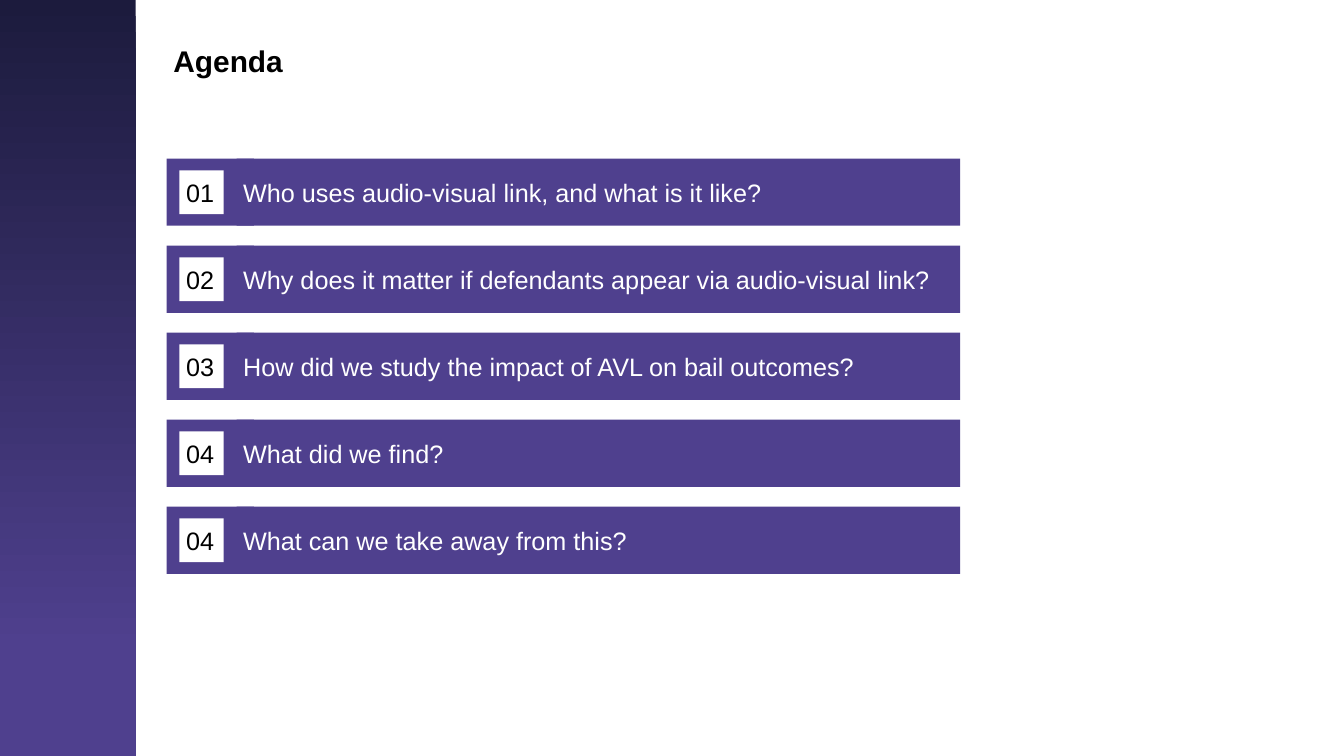
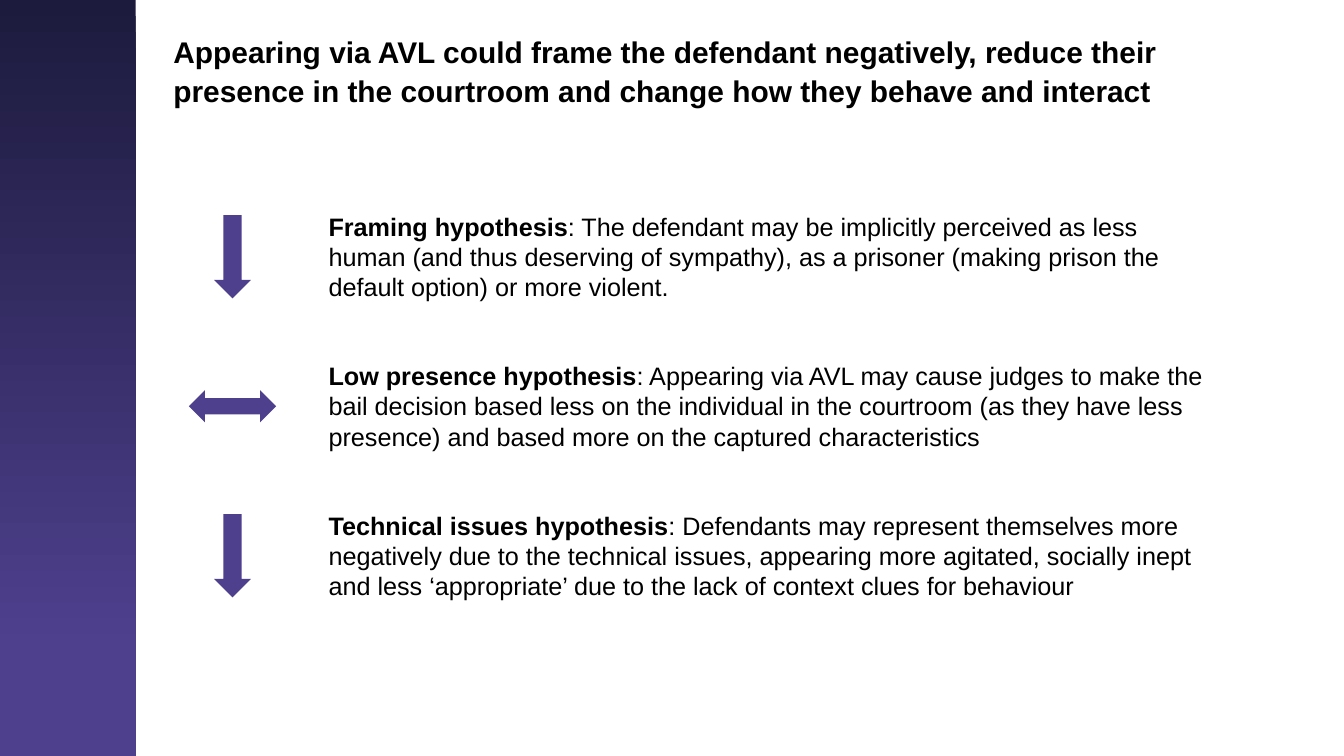
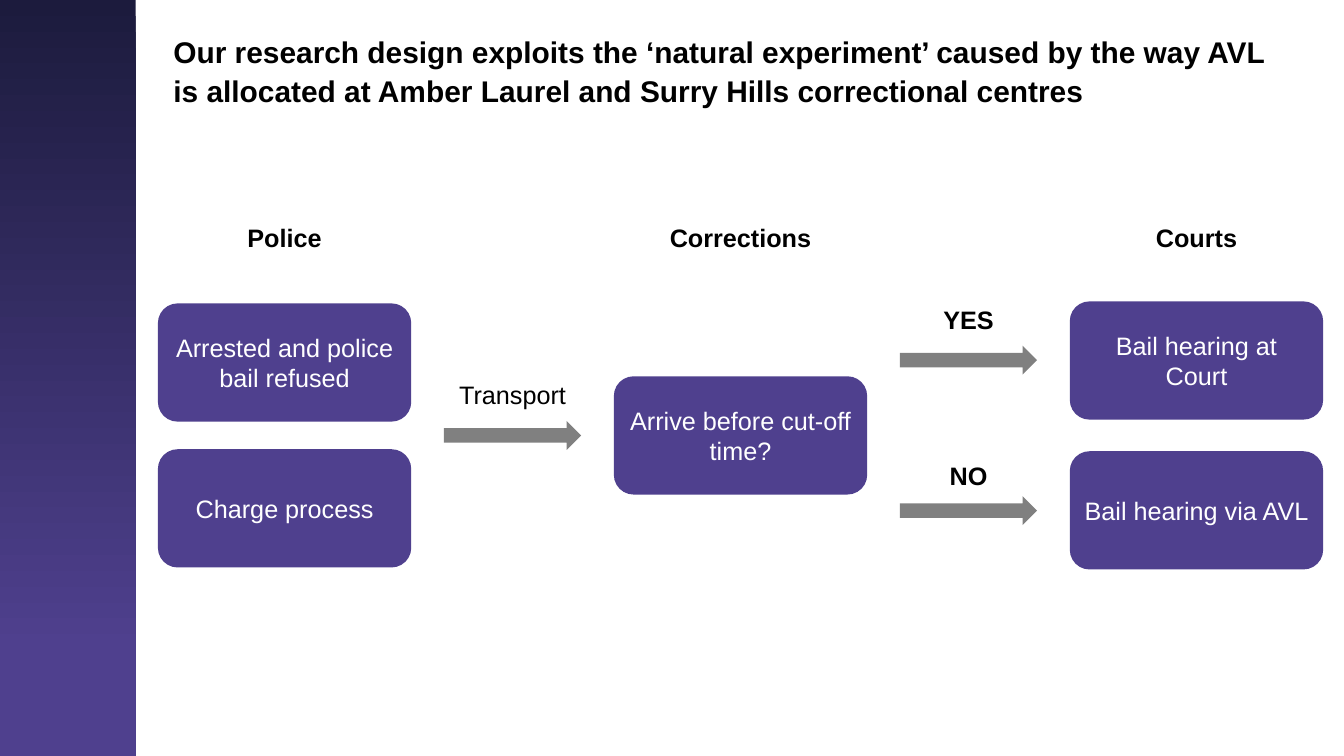
from dataclasses import dataclass

import pptx
import pptx.dml.color
import pptx.enum.shapes
import pptx.enum.text
import pptx.util

Inches = pptx.util.Inches
Shape = pptx.enum.shapes.MSO_SHAPE
Align = pptx.enum.text.PP_ALIGN
Anchor = pptx.enum.text.MSO_ANCHOR
AutoSize = pptx.enum.text.MSO_AUTO_SIZE


@dataclass(frozen=True)
class Theme:
    purple: str = "4F408E"
    navy: str = "1C1B3D"
    grey: str = "808080"
    white: str = "FFFFFF"
    black: str = "000000"
    font: str = "Arial"
    title_size: int = 32
    text_size: int = 27


@dataclass(frozen=True)
class Box:
    """A rectangle in inches."""
    left: float
    top: float
    width: float
    height: float

    @property
    def middle(self):
        return self.top + self.height / 2

    def lengths(self):
        return [Inches(n) for n in (self.left, self.top, self.width, self.height)]


THEME = Theme()
PAGE = Box(0, 0, 20, 11.25)

AGENDA = [
    ("01", "Who uses audio-visual link, and what is it like?"),
    ("02", "Why does it matter if defendants appear via audio-visual link?"),
    ("03", "How did we study the impact of AVL on bail outcomes?"),
    ("04", "What did we find?"),
    ("04", "What can we take away from this?"),
]

HYPOTHESES = [
    (Shape.DOWN_ARROW, 0.55, 1.24, "Framing hypothesis",
     ": The defendant may be implicitly perceived as less human (and thus deserving "
     "of sympathy), as a prisoner (making prison the default option) or more violent."),
    (Shape.LEFT_RIGHT_ARROW, 1.3, 0.48, "Low presence hypothesis",
     ": Appearing via AVL may cause judges to make the bail decision based less on the "
     "individual in the courtroom (as they have less presence) and based more on the "
     "captured characteristics"),
    (Shape.DOWN_ARROW, 0.55, 1.24, "Technical issues hypothesis",
     ": Defendants may represent themselves more negatively due to the technical issues, "
     "appearing more agitated, socially inept and less ‘appropriate’ due to the lack of "
     "context clues for behaviour"),
]

# Heading, gap between the steps, steps
STAGES = [
    ("Police", 0.41, ["Arrested and police bail refused", "Charge process"]),
    ("Corrections", 0, ["Arrive before cut-off time?"]),
    ("Courts", 0.47, ["Bail hearing at Court", "Bail hearing via AVL"]),
]

# Column gap, arrow centre below the flow's top, label rise above it, label, bold
FLOW_ARROWS = [
    (0, 3.22, 0.88, "Transport", False),
    (1, 2.1, 0.88, "YES", True),
    (1, 4.34, 0.8, "NO", True),
]


def rgb(color):
    return pptx.dml.color.RGBColor.from_string(color)


def spread(area, count, height):
    """Split an area into rows of one height with equal gaps."""
    pitch = (area.height - height) / (count - 1)
    return [Box(area.left, area.top + i * pitch, area.width, height) for i in range(count)]


def add_span(para, text, color=THEME.black, size=THEME.text_size, bold=False):
    span = para.add_run()
    span.text = text
    span.font.name = THEME.font
    span.font.size = pptx.util.Pt(size)
    span.font.bold = bold
    span.font.color.rgb = rgb(color)


def add_block(shapes, kind, box, fill, text="", color=THEME.white, align=Align.LEFT):
    block = shapes.add_shape(kind, *box.lengths())
    block.shadow.inherit = False
    block.fill.solid()
    block.fill.fore_color.rgb = rgb(fill)
    block.line.fill.background()
    if text:
        block.text_frame.word_wrap = True
        block.text_frame.vertical_anchor = Anchor.MIDDLE
        para = block.text_frame.paragraphs[0]
        para.alignment = align
        add_span(para, text, color)
    return block


def add_text(shapes, box, spans, align=Align.LEFT):
    """Add one paragraph made of (text, bold) spans."""
    frame = shapes.add_textbox(*box.lengths()).text_frame
    frame.word_wrap = True
    frame.auto_size = AutoSize.SHAPE_TO_FIT_TEXT
    para = frame.paragraphs[0]
    para.alignment = align
    for text, bold in spans:
        add_span(para, text, bold=bold)


def add_side_band(deck, page):
    """Draw the gradient band and move it to the master, behind every slide."""
    band = add_block(page.shapes, Shape.RECTANGLE, Box(0, 0, 2.02, PAGE.height), THEME.navy)
    band.fill.gradient()
    band.fill.gradient_angle = 270
    stops = zip(band.fill.gradient_stops, (0, 0.86), (THEME.navy, THEME.purple))
    for stop, position, color in stops:
        stop.position = position
        stop.color.rgb = rgb(color)
    deck.slide_master.shapes.element.insert(2, band.element)


def add_page(deck, title, title_top=0.39):
    page = deck.slides.add_slide(deck.slide_layouts.get_by_name("Title Only"))
    holder = page.shapes.title
    holder.left, holder.top, holder.width, holder.height = Box(
        2.48, title_top, 16.8, 1.09).lengths()
    frame = holder.text_frame
    frame.word_wrap = True
    frame.auto_size = AutoSize.NONE
    frame.vertical_anchor = Anchor.TOP
    para = frame.paragraphs[0]
    para.alignment = Align.LEFT
    para.line_spacing = 1.1
    add_span(para, title, size=THEME.title_size, bold=True)
    return page


def add_agenda(page, area):
    for row, (number, topic) in zip(spread(area, len(AGENDA), 1), AGENDA):
        shapes = page.shapes.add_group_shape().shapes
        tab = Box(row.left, row.top, 1.3, row.height)
        bar = Box(row.left + 1.04, row.top, row.width - 1.04, row.height)
        badge = Box(row.left + 0.19, row.middle - 0.325, 0.66, 0.65)
        add_block(shapes, Shape.RECTANGLE, tab, THEME.purple)
        add_block(shapes, Shape.RECTANGLE, bar, THEME.purple, topic)
        add_block(shapes, Shape.RECTANGLE, badge, THEME.white, number, THEME.black)


def add_hypotheses(page, area):
    rows = spread(area, len(HYPOTHESES), 1.46)
    for row, (kind, width, height, name, detail) in zip(rows, HYPOTHESES):
        arrow = Box(row.left + 0.65 - width / 2, row.middle - height / 2, width, height)
        add_block(page.shapes, kind, arrow, THEME.purple)
        words = Box(row.left + 1.98, row.top, row.width - 1.98, row.height)
        add_text(page.shapes, words, [(name, True), (detail, False)])


def add_flow(page, area):
    """Draw the stages as columns, with labelled arrows in the gaps between them."""
    shapes = page.shapes.add_group_shape().shapes
    step_width, step_height = 3.77, 1.76
    arrow_width, arrow_height = 2.04, 0.43
    label_width, label_height = 3.14, 0.56
    pitch = (area.width - step_width) / (len(STAGES) - 1)
    flow_middle = area.top + 3.22

    def add_label(center, top, text, bold):
        box = Box(center - label_width / 2, top, label_width, label_height)
        add_text(shapes, box, [(text, bold)], Align.CENTER)

    for column, (heading, gap, steps) in enumerate(STAGES):
        left = area.left + column * pitch
        add_label(left + step_width / 2, area.top, heading, True)
        stack_height = len(steps) * (step_height + gap) - gap
        top = flow_middle - stack_height / 2
        for row, step in enumerate(steps):
            box = Box(left, top + row * (step_height + gap), step_width, step_height)
            add_block(shapes, Shape.ROUNDED_RECTANGLE, box, THEME.purple, step,
                      align=Align.CENTER)

    for column, drop, rise, label, bold in FLOW_ARROWS:
        center = area.left + column * pitch + (step_width + pitch) / 2
        middle = area.top + drop
        arrow = Box(center - arrow_width / 2, middle - arrow_height / 2,
                    arrow_width, arrow_height)
        add_block(shapes, Shape.RIGHT_ARROW, arrow, THEME.grey)
        add_label(center, middle - rise, label, bold)


def main():
    deck = pptx.Presentation()
    deck.slide_width, deck.slide_height = Inches(PAGE.width), Inches(PAGE.height)

    agenda = add_page(deck, "Agenda", title_top=0.53)
    add_side_band(deck, agenda)
    add_agenda(agenda, Box(2.48, 2.36, 11.81, 6.18))

    hypotheses = add_page(
        deck, "Appearing via AVL could frame the defendant negatively, reduce their "
        "presence in the courtroom and change how they behave and interact")
    add_hypotheses(hypotheses, Box(2.81, 3.09, 15.2, 5.91))

    design = add_page(
        deck, "Our research design exploits the ‘natural experiment’ caused by the way "
        "AVL is allocated at Amber Laurel and Surry Hills correctional centres")
    add_flow(design, Box(2.35, 3.26, 17.34, 5.22))

    deck.save("out.pptx")


if __name__ == "__main__":
    main()
